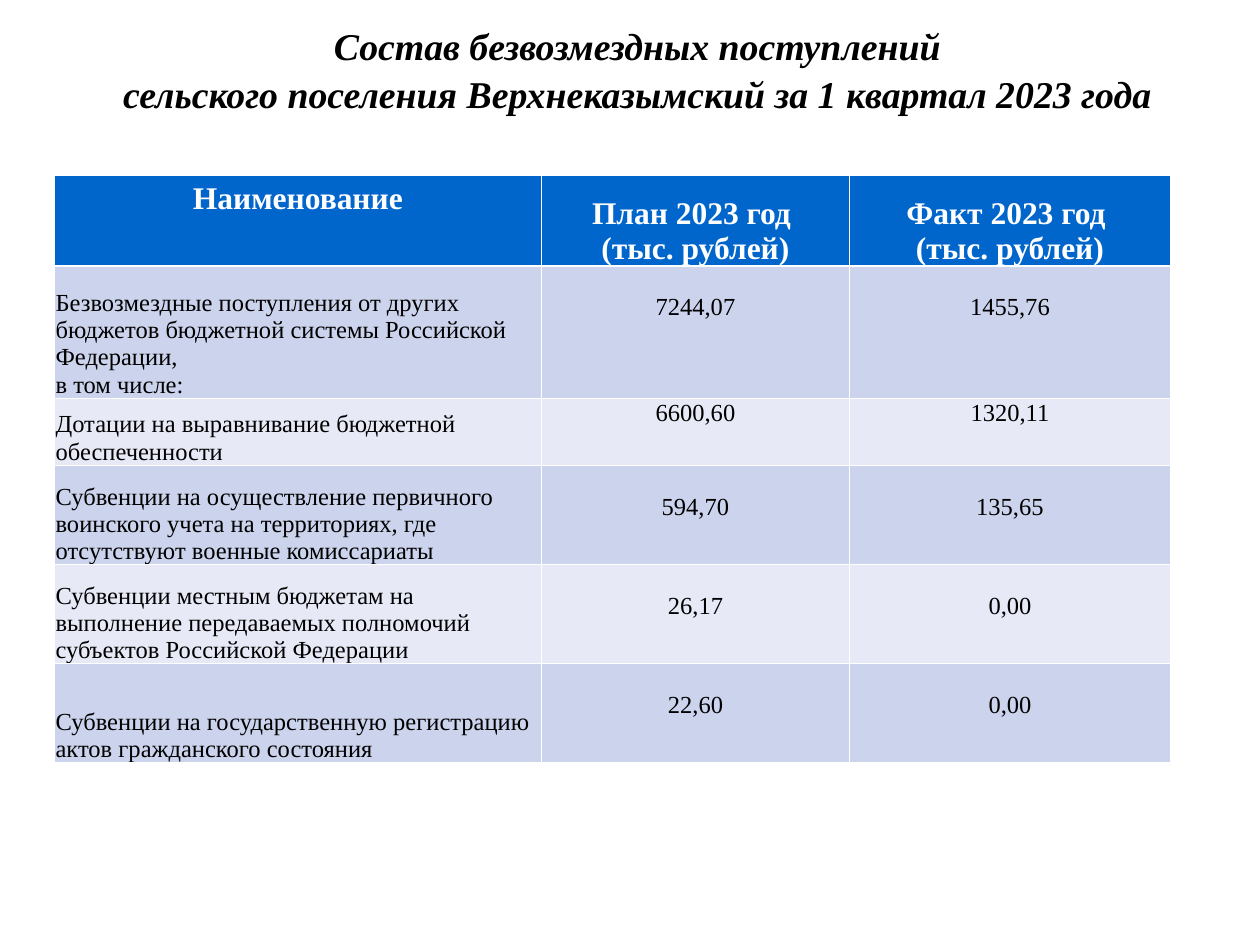
import pptx
import pptx.util
import pptx.dml.color
import pptx.enum.text

Cm, Pt = pptx.util.Cm, pptx.util.Pt
Align = pptx.enum.text.PP_ALIGN
Anchor = pptx.enum.text.MSO_ANCHOR

TITLE = ("Состав безвозмездных поступлений \v"
         "сельского поселения Верхнеказымский за 1 квартал 2023 года ")
WIDTHS = [9.83, 6.2, 6.48]
HEIGHTS = [1.83, 2.67, 1.35, 2, 2, 2]
HEAD = ["Наименование",
        "План 2023 год \n(тыс. рублей)",
        "Факт 2023 год \n(тыс. рублей)"]
ROWS = [
    ["Безвозмездные поступления от других бюджетов бюджетной системы "
     "Российской Федерации,\nв том числе:", "7244,07", "1455,76"],
    ["Дотации на выравнивание бюджетной обеспеченности", "6600,60", "1320,11"],
    ["Субвенции на осуществление первичного воинского учета на территориях, "
     "где отсутствуют военные комиссариаты", "594,70", "135,65"],
    ["Субвенции местным бюджетам на выполнение передаваемых полномочий "
     "субъектов Российской Федерации", "26,17", "0,00"],
    ["Субвенции на государственную регистрацию актов гражданского состояния",
     "22,60", "0,00"],
]


def color(code):
    return pptx.dml.color.RGBColor.from_string(code)


class Deck:
    font = "Times New Roman"
    head = "0066CC"
    bands = ["CCD3EC", "E7EAF6"]
    thin = 0.03   # cell inset
    drop = 0.57   # inset that lowers a value by one line

    def __init__(self, slide):
        self.slide = slide

    def style(self, frame, size, ink, align, bold=False, italic=False):
        for para in frame.paragraphs:
            para.alignment = align
            font = para.font
            font.name, font.size = self.font, Pt(size)
            font.bold, font.italic = bold, italic
            font.color.rgb = color(ink)

    def title(self, text, left, top, width, height):
        shape = self.slide.shapes.title
        shape.left, shape.top = Cm(left), Cm(top)
        shape.width, shape.height = Cm(width), Cm(height)
        frame = shape.text_frame
        frame.text = text
        frame.word_wrap = True
        frame.auto_size = pptx.enum.text.MSO_AUTO_SIZE.NONE
        frame.vertical_anchor = Anchor.MIDDLE
        frame.margin_top, frame.margin_bottom = 0, Cm(0.85)
        self.style(frame, 21.6, "000000", Align.CENTER, True, True)
        frame.paragraphs[0].line_spacing = 1.07

    def cell(self, cell, text, fill, anchor, top=None):
        cell.text = text
        cell.fill.solid()
        cell.fill.fore_color.rgb = color(fill)
        cell.vertical_anchor = anchor
        if top is not None:
            cell.margin_left = cell.margin_right = Cm(self.thin)
            cell.margin_top, cell.margin_bottom = Cm(top), 0
        return cell.text_frame

    def table(self, left, top, head, rows, widths, heights):
        grid = self.slide.shapes.add_table(
            len(heights), len(widths), Cm(left), Cm(top),
            Cm(sum(widths)), Cm(sum(heights))).table
        grid.horz_banding = False
        for col, width in zip(grid.columns, widths):
            col.width = Cm(width)
        for row, height in zip(grid.rows, heights):
            row.height = Cm(height)

        # Header row
        for c, text in enumerate(head):
            anchor, inset = (Anchor.BOTTOM, self.thin) if c else (Anchor.TOP, None)
            frame = self.cell(grid.cell(0, c), text, self.head, anchor, inset)
            self.style(frame, 18, "FFFFFF", Align.CENTER, True)

        # Body rows: names at the bottom, values at the top
        for r, row in enumerate(rows):
            fill = self.bands[r % 2]
            low = self.thin if r == 1 else self.drop
            for c, text in enumerate(row):
                anchor, inset, align = (
                    (Anchor.TOP, low, Align.CENTER) if c
                    else (Anchor.BOTTOM, self.thin, Align.LEFT))
                frame = self.cell(grid.cell(r + 1, c), text, fill, anchor, inset)
                self.style(frame, 14, "000000", align)


def main():
    show = pptx.Presentation()
    show.slide_width, show.slide_height = Cm(25.4), Cm(19.05)
    deck = Deck(show.slides.add_slide(show.slide_layouts[5]))
    deck.title(TITLE, 1.3, 0.71, 23.29, 2.16)
    deck.table(1.09, 3.53, HEAD, ROWS, WIDTHS, HEIGHTS)
    show.save("out.pptx")


if __name__ == "__main__":
    main()
